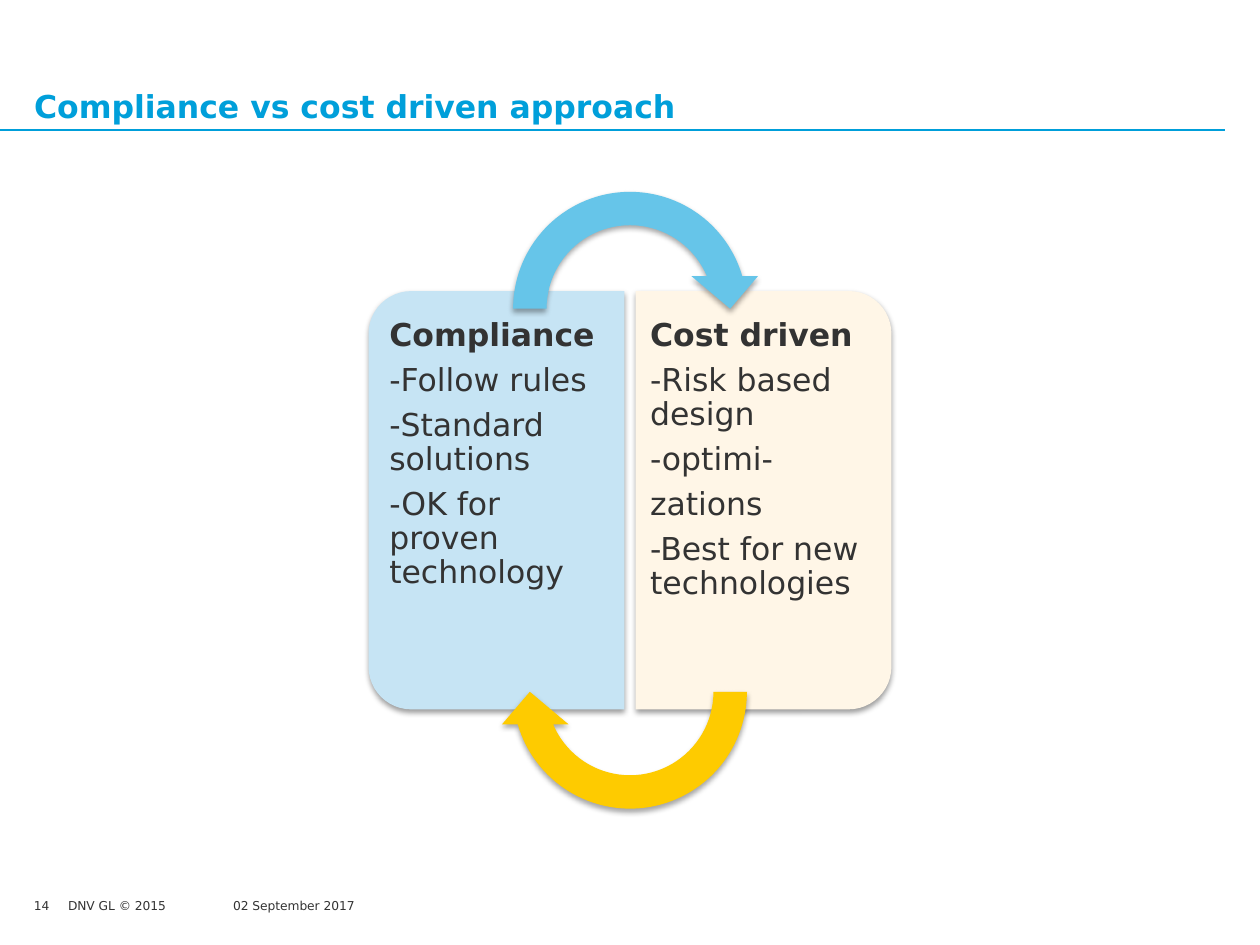
import pptx
import pptx.dml.color
import pptx.enum.shapes
import pptx.enum.text
import pptx.oxml
import pptx.oxml.ns
import pptx.util
from pptx.util import Inches

# Content
TITLE = "Compliance vs cost driven approach"
FOOTERS = [  # text, left, width, wraps
    ("14", 0.27, 0.26, True),
    ("DNV GL © 2015", 0.54, 0.8, False),
    ("02 September 2017", 1.85, 3.07, True),
]
PANELS = [  # heading, points, fill, rotation, text left, left and right inset
    ("Compliance", ["-Follow rules", "-Standard solutions", "-OK for proven technology"],
     "left_panel", 270, 3.02, (0.07, 0.11)),
    ("Cost driven", ["-Risk based design", "-optimi-", "zations", "-Best for new technologies"],
     "right_panel", 90, 5.05, (0.11, 0.07)),
]
ARROWS = [("top_arrow", 1.39, 0), ("bottom_arrow", 4.43, 180)]  # fill, top, rotation

THEME = {
    "font": "DejaVu Sans", "title_size": 18, "body_size": 18, "footer_size": 7,
    "text": "333333", "accent": "009FDA",
    "left_panel": "C6E4F4", "right_panel": "FFF6E7",
    "top_arrow": "66C5E9", "bottom_arrow": "FECB00",
}

# Layout in inches
CENTER_X = 5
PANEL_TOP, PANEL_WIDTH, PANEL_HEIGHT, PANEL_GAP = 2.31, 2.03, 3.32, 0.09
ARROW_SIZE = 2.12
ARROW_ANGLES = (19.04, 340.96, 180)  # head, end and start, in degrees


def color(name):
    return pptx.dml.color.RGBColor.from_string(THEME[name])


def set_effects(shape, content=""):
    namespace = pptx.oxml.ns.nsdecls("a")
    properties = shape._element.spPr
    properties.append(pptx.oxml.parse_xml(f"<a:effectLst {namespace}>{content}</a:effectLst>"))


def set_shadow(shape, opacity, distance):
    shadow = (f'<a:outerShdw blurRad="{pptx.util.Pt(3.1)}" dist="{pptx.util.Pt(distance)}" '
              'dir="5400000" rotWithShape="0"><a:srgbClr val="000000">'
              f'<a:alpha val="{opacity * 1000}"/></a:srgbClr></a:outerShdw>')
    set_effects(shape, shadow)


def add_text(slide, lines, box, size, color_name="text", insets=(0, 0, 0, 0), wrap=True):
    frame = slide.shapes.add_textbox(*map(Inches, box)).text_frame
    frame.word_wrap = wrap
    frame.margin_left, frame.margin_top, frame.margin_right, frame.margin_bottom = map(Inches, insets)
    frame.text = "\n".join(lines)
    for paragraph in frame.paragraphs:
        paragraph.font.name = THEME["font"]
        paragraph.font.size = pptx.util.Pt(THEME[size])
        paragraph.font.color.rgb = color(color_name)
    return frame


def add_filled_shape(slide, kind, box, fill, rotation, adjustments):
    shape = slide.shapes.add_shape(kind, *map(Inches, box))
    shape.rotation = rotation
    shape.fill.solid()
    shape.fill.fore_color.rgb = color(fill)
    shape.line.fill.background()
    for index, value in enumerate(adjustments):
        shape.adjustments[index] = value
    return shape


def add_panel(slide, column, heading, points, fill, rotation, text_left, side_insets):
    # The rounded end is turned outwards, so the unrotated box lies on its side
    center_x = CENTER_X + (column - 0.5) * (PANEL_WIDTH + PANEL_GAP)
    center_y = PANEL_TOP + PANEL_HEIGHT / 2
    box = (center_x - PANEL_HEIGHT / 2, center_y - PANEL_WIDTH / 2, PANEL_HEIGHT, PANEL_WIDTH)
    panel = add_filled_shape(slide, pptx.enum.shapes.MSO_SHAPE.ROUND_2_SAME_RECTANGLE,
                             box, fill, rotation, (0.167, 0))
    set_shadow(panel, 38, 1.6)

    left, right = side_insets
    frame = add_text(slide, [heading, *points], (text_left, PANEL_TOP + 0.1, 1.93, 3.12),
                     "body_size", insets=(left, 0.12, right, 0.12))
    frame.paragraphs[0].font.bold = True
    for paragraph in frame.paragraphs:
        paragraph.line_spacing = 0.9
        paragraph.space_after = pptx.util.Pt(6.3)


def main():
    presentation = pptx.Presentation()
    presentation.slide_width, presentation.slide_height = Inches(10), Inches(7.5)
    slide = presentation.slides.add_slide(presentation.slide_layouts[6])

    # Title and rule
    title = add_text(slide, [TITLE], (0.27, 0.26, 9.45, 0.73), "title_size", "accent")
    title.vertical_anchor = pptx.enum.text.MSO_ANCHOR.BOTTOM
    title.paragraphs[0].font.bold = True
    rule = slide.shapes.add_connector(pptx.enum.shapes.MSO_CONNECTOR.STRAIGHT,
                                      *map(Inches, (0, 1.03, 9.72, 1.03)))
    rule.line.color.rgb = color("accent")
    rule.line.width = pptx.util.Pt(1)
    set_effects(rule)

    # Panels
    for column, panel in enumerate(PANELS):
        add_panel(slide, column, *panel)

    # Cycle arrows; angle adjustments count 0.6 per degree
    adjustments = (0.125, *(angle * 0.6 for angle in ARROW_ANGLES), 0.125)
    for fill, top, rotation in ARROWS:
        box = (CENTER_X - ARROW_SIZE / 2, top, ARROW_SIZE, ARROW_SIZE)
        arrow = add_filled_shape(slide, pptx.enum.shapes.MSO_SHAPE.CIRCULAR_ARROW,
                                 box, fill, rotation, adjustments)
        set_shadow(arrow, 35, 1.8)

    # Footer
    for text, left, width, wrap in FOOTERS:
        add_text(slide, [text], (left, 7.13, width, 0.2), "footer_size", wrap=wrap)

    presentation.save("out.pptx")


if __name__ == "__main__":
    main()
